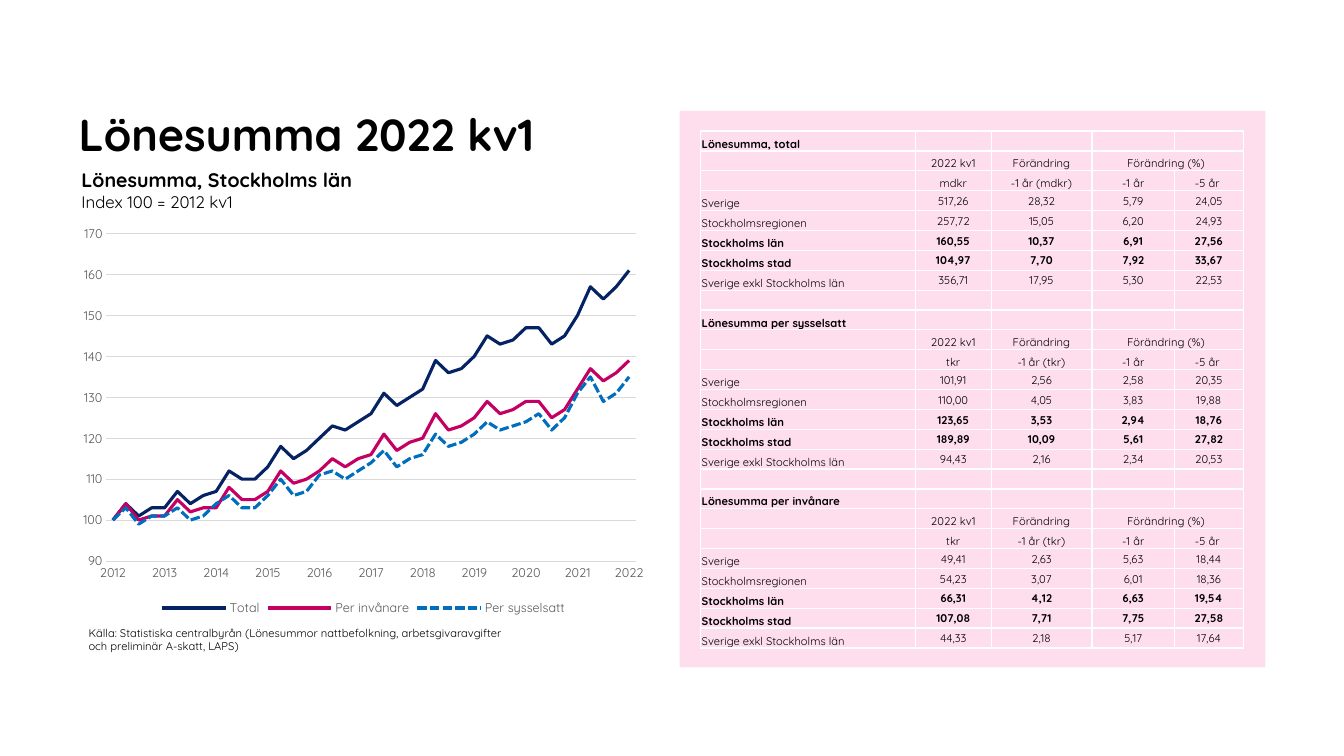
from lxml import etree
from pptx import Presentation
from pptx.chart.data import CategoryChartData as Data
from pptx.dml.color import RGBColor as RGB
from pptx.enum.chart import XL_CHART_TYPE as Kind, XL_LEGEND_POSITION as Spot, XL_TICK_MARK as Tick
from pptx.enum.dml import MSO_LINE as Dash
from pptx.enum.shapes import MSO_SHAPE as Shape
from pptx.enum.text import MSO_ANCHOR as Anchor, PP_ALIGN as Align
from pptx.oxml.ns import qn
from pptx.util import Inches, Pt

BLACK = RGB(0x00, 0x00, 0x00)
PINK = RGB(0xFE, 0xDE, 0xED)
GREY = RGB(0x59, 0x59, 0x59)
PALE = RGB(0xD9, 0xD9, 0xD9)
NAVY = RGB(0x05, 0x23, 0x64)
ROSE = RGB(0xC4, 0x00, 0x64)
BLUE = RGB(0x00, 0x6E, 0xBF)
FACE = "Quicksand"

TOTAL = [100, 104, 101, 103, 103, 107, 104, 106, 107, 112, 110, 110, 113, 118,
         115, 117, 120, 123, 122, 124, 126, 131, 128, 130, 132, 139, 136, 137,
         140, 145, 143, 144, 147, 147, 143, 145, 150, 157, 154, 157, 161]
CAPITA = [100, 104, 100, 101, 101, 105, 102, 103, 103, 108, 105, 105, 107, 112,
          109, 110, 112, 115, 113, 115, 116, 121, 117, 119, 120, 126, 122, 123,
          125, 129, 126, 127, 129, 129, 125, 127, 132, 137, 134, 136, 139]
WORKER = [100, 103, 99, 101, 101, 103, 100, 101, 104, 106, 103, 103, 106, 110,
          106, 107, 111, 112, 110, 112, 114, 117, 113, 115, 116, 121, 118, 119,
          121, 124, 122, 123, 124, 126, 122, 125, 131, 135, 129, 131, 135]
LINES = [("Total", TOTAL, NAVY, Dash.SOLID),
         ("Per invånare", CAPITA, ROSE, Dash.SOLID),
         ("Per sysselsatt", WORKER, BLUE, Dash.SQUARE_DOT)]

PLACES = ["Sverige", "Stockholmsregionen", "Stockholms län", "Stockholms stad",
          "Sverige exkl Stockholms län"]
BOLD = PLACES[2:4]
BLOCKS = [
    ("Lönesumma, total", "mdkr",
     ["517,26 28,32 5,79 24,05", "257,72 15,05 6,20 24,93", "160,55 10,37 6,91 27,56",
      "104,97 7,70 7,92 33,67", "356,71 17,95 5,30 22,53"]),
    ("Lönesumma per sysselsatt", "tkr",
     ["101,91 2,56 2,58 20,35", "110,00 4,05 3,83 19,88", "123,65 3,53 2,94 18,76",
      "189,89 10,09 5,61 27,82", "94,43 2,16 2,34 20,53"]),
    ("Lönesumma per invånare", "tkr",
     ["49,41 2,63 5,63 18,44", "54,23 3,07 6,01 18,36", "66,31 4,12 6,63 19,54",
      "107,08 7,71 7,75 27,58", "44,33 2,18 5,17 17,64"]),
]
WIDTHS = [2.13, 0.75, 1, 0.82, 0.68]
STEP = 9


def style(font, size, color=BLACK, bold=False):
    for key, val in {"name": FACE, "size": Pt(size), "bold": bold}.items():
        setattr(font, key, val)
    font.color.rgb = color


def head(slide, box):
    title = slide.shapes.title
    for key, val in zip(("left", "top", "width", "height"), box):
        setattr(title, key, Inches(val))
    frame = title.text_frame
    frame.text = "Lönesumma 2022 kv1"
    for side in ("left", "top", "right", "bottom"):
        setattr(frame, "margin_" + side, 0)
    frame.vertical_anchor = Anchor.BOTTOM
    para = frame.paragraphs[0]
    para.alignment = Align.LEFT
    style(para.runs[0].font, 32, bold=True)


def label(slide, box, parts):
    frame = slide.shapes.add_textbox(*map(Inches, box)).text_frame
    frame.word_wrap = True
    para = frame.paragraphs[0]
    for pos, (text, size, bold) in enumerate(parts):
        if pos:
            para.add_line_break()
        run = para.add_run()
        run.text = text
        style(run.font, size, bold=bold)


def graph(slide, box):
    data = Data(number_format="0")
    data.categories = ["" if pos % 4 else str(2012 + pos // 4) for pos in range(len(TOTAL))]
    for name, vals, _, _ in LINES:
        data.add_series(name, vals)
    chart = slide.shapes.add_chart(Kind.LINE, *map(Inches, box), data).chart
    style(chart.font, 10)
    chart.has_title = False
    chart.has_legend = True
    chart.legend.position = Spot.BOTTOM
    chart.legend.include_in_layout = False
    style(chart.legend.font, 9, GREY)
    years, index = chart.category_axis, chart.value_axis
    for axis in (years, index):
        axis.major_tick_mark = axis.minor_tick_mark = Tick.NONE
        style(axis.tick_labels.font, 9, GREY)
    for key, val in {"minimum_scale": 90, "maximum_scale": 170, "major_unit": 10}.items():
        setattr(index, key, val)
    index.format.line.fill.background()
    for line in (years.format.line, index.major_gridlines.format.line):
        line.color.rgb = PALE
        line.width = Pt(0.75)
    years.tick_labels.font._element.getparent().getparent().getparent().find(
        qn("a:bodyPr")).set("rot", "-60000000")
    for series, (_, _, color, dash) in zip(chart.plots[0].series, LINES):
        series.smooth = False
        line = series.format.line
        line.color.rgb = color
        line.width = Pt(2.25)
        line.dash_style = dash


def panel(slide, box):
    card = slide.shapes.add_shape(Shape.RECTANGLE, *map(Inches, box))
    card.shadow.inherit = False
    card.fill.solid()
    card.fill.fore_color.rgb = PINK
    card.line.fill.background()
    left, top, _, _ = box
    stats(slide, (left + 0.21, top + 0.2, sum(WIDTHS), 5.13))


def fill(cell, text, bold, center, middle):
    cell.fill.background()
    cell.margin_left = cell.margin_right = cell.margin_top = Inches(0.01)
    cell.margin_bottom = 0
    cell.vertical_anchor = Anchor.MIDDLE if middle else Anchor.BOTTOM
    para = cell.text_frame.paragraphs[0]
    para.alignment = Align.CENTER if center else Align.LEFT
    if text:
        run = para.add_run()
        run.text = text
        style(run.font, 8, bold=bold)
    else:
        etree.SubElement(para._p, qn("a:endParaRPr"), sz="800")


def stats(slide, box):
    count = STEP * len(BLOCKS) - 1
    table = slide.shapes.add_table(count, len(WIDTHS), *map(Inches, box)).table
    table.first_row = table.horz_banding = False
    for col, width in zip(table.columns, WIDTHS):
        col.width = Inches(width)
    grid = []
    for name, unit, rows in BLOCKS:
        grid += [[name], ["", "2022 kv1", "Förändring", "Förändring (%) "],
                 ["", unit, f"-1 år ({unit})", "-1 år", "-5 år "]]
        grid += [[place, *row.split()] for place, row in zip(PLACES, rows)]
        grid.append([])
    for r, texts in enumerate(grid[:count]):
        place = r % STEP
        bold = place == 0 or texts[:1] and texts[0] in BOLD
        for c in range(len(WIDTHS)):
            text = texts[c] if c < len(texts) else ""
            fill(table.cell(r, c), text, bool(bold), c > 0, c > 0 and place > 2)
        if place == 1:
            table.cell(r, 3).merge(table.cell(r, 4))


def main():
    deck = Presentation()
    deck.slide_width, deck.slide_height = Inches(13.33), Inches(7.5)
    slide = deck.slides.add_slide(deck.slide_layouts[5])
    panel(slide, (6.74, 1.1, 5.81, 5.52))
    head(slide, (0.78, 0.37, 9.22, 1.22))
    label(slide, (0.78, 6.16, 4.41, 0.37),
          [("Källa: Statistiska centralbyrån (Lönesummor nattbefolkning, arbetsgivaravgifter "
            "och preliminär A-skatt, LAPS)", 8, False)])
    label(slide, (0.71, 1.62, 5.8, 0.54),
          [("Lönesumma, Stockholms län", 14, True), ("Index 100 = 2012 kv1", 12, False)])
    graph(slide, (0.71, 2.16, 5.79, 3.99))
    deck.save("out.pptx")


if __name__ == "__main__":
    main()
